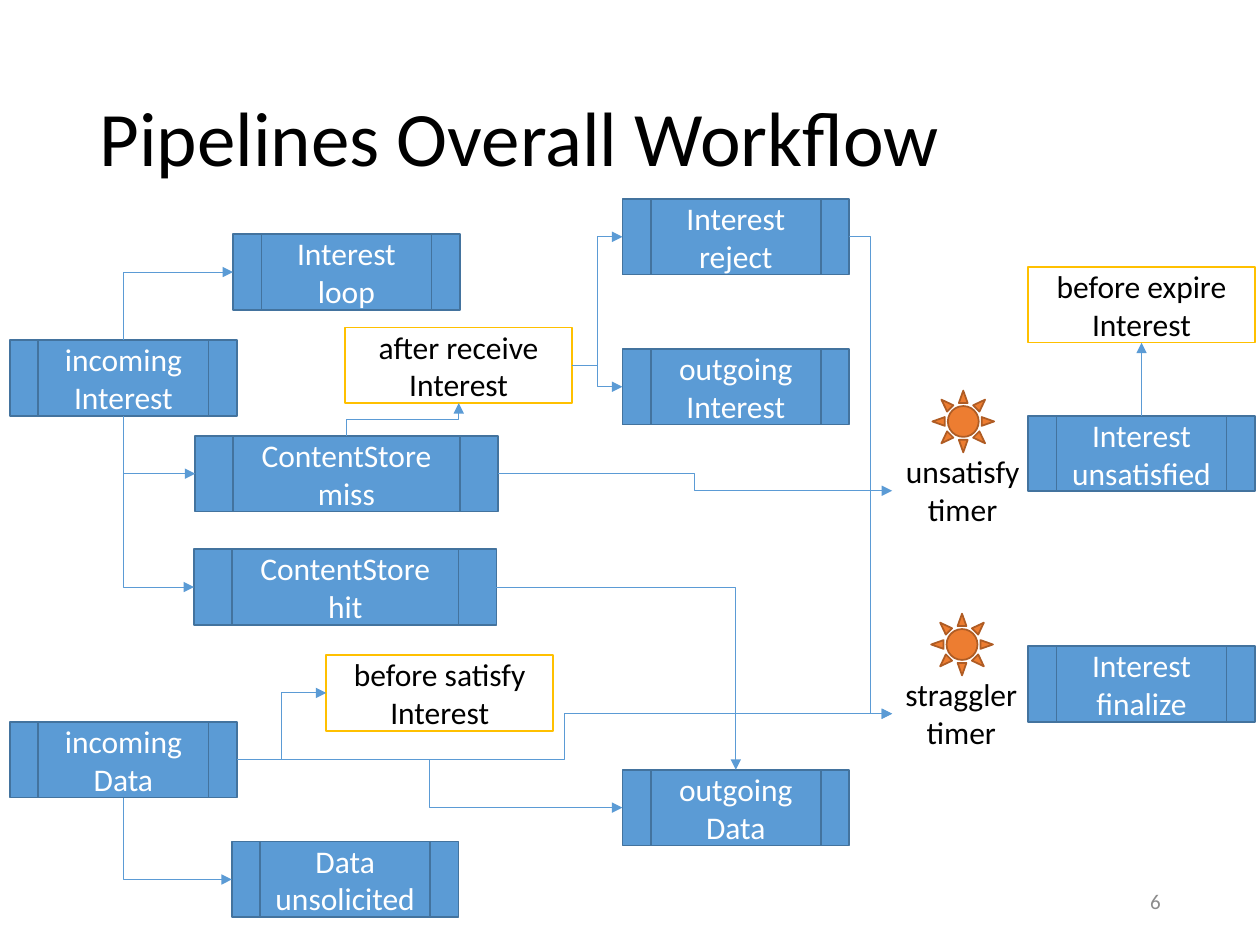
"""Build the pipelines overall workflow slide."""
from lxml.etree import SubElement
from pptx import Presentation
from pptx.dml.color import RGBColor
from pptx.enum.shapes import MSO_CONNECTOR, MSO_SHAPE
from pptx.enum.text import MSO_ANCHOR, MSO_AUTO_SIZE, PP_ALIGN
from pptx.oxml.ns import qn
from pptx.util import Inches, Pt

BLUE = RGBColor(0x5B, 0x9B, 0xD5)
DARK_BLUE = RGBColor(0x43, 0x73, 0x9E)
GOLD = RGBColor(0xFF, 0xC0, 0x00)
ORANGE = RGBColor(0xED, 0x7D, 0x31)
DARK_ORANGE = RGBColor(0xAF, 0x5C, 0x24)
GRAY = RGBColor(0x8C, 0x8C, 0x8C)
WHITE = RGBColor(0xFF, 0xFF, 0xFF)
BLACK = RGBColor(0x00, 0x00, 0x00)

TOP, LEFT, BOTTOM, RIGHT = range(4)
NODE_WIDTH, STORE_WIDTH, NODE_HEIGHT, SUN_SIZE = 1.8, 2.4, 0.6, 0.49

PIPELINES = [
    ("incoming Interest", 0.08, 2.7, NODE_WIDTH),
    ("incoming Data", 0.08, 5.73, NODE_WIDTH),
    ("outgoing Interest", 4.94, 2.77, NODE_WIDTH),
    ("outgoing Data", 4.94, 6.11, NODE_WIDTH),
    ("Interest reject", 4.94, 1.58, NODE_WIDTH),
    ("Interest unsatisfied", 8.16, 3.3, NODE_WIDTH),
    ("Interest loop", 1.85, 1.86, NODE_WIDTH),
    ("Data unsolicited", 1.84, 6.68, NODE_WIDTH),
    ("Interest finalize", 8.16, 5.13, NODE_WIDTH),
    ("ContentStore miss", 1.55, 3.46, STORE_WIDTH),
    ("ContentStore hit", 1.54, 4.36, STORE_WIDTH),
]
TRIGGERS = [
    ("after receive Interest", 2.74, 2.6, NODE_WIDTH),
    ("before satisfy Interest", 2.59, 5.2, NODE_WIDTH),
    ("before expire Interest", 8.16, 2.12, NODE_WIDTH),
]
TIMERS = [
    ("unsatisfy timer", 7.08, 3.54, 1.12, 7.4),
    ("straggler timer", 7.08, 5.31, 1.1, 7.39),
]
LINKS = [
    ("incoming Interest", TOP, "Interest loop", LEFT),
    ("incoming Interest", BOTTOM, "ContentStore miss", LEFT),
    ("incoming Interest", BOTTOM, "ContentStore hit", LEFT),
    ("ContentStore miss", TOP, "after receive Interest", BOTTOM),
    ("ContentStore miss", RIGHT, "unsatisfy timer", LEFT),
    ("ContentStore hit", RIGHT, "outgoing Data", TOP),
    ("after receive Interest", RIGHT, "Interest reject", LEFT),
    ("after receive Interest", RIGHT, "outgoing Interest", LEFT),
    ("Interest reject", RIGHT, "straggler timer", LEFT),
    ("Interest unsatisfied", TOP, "before expire Interest", BOTTOM),
    ("incoming Data", BOTTOM, "Data unsolicited", LEFT),
    ("incoming Data", RIGHT, "before satisfy Interest", LEFT),
    ("incoming Data", RIGHT, "outgoing Data", LEFT),
    ("incoming Data", RIGHT, "straggler timer", LEFT),
]


def write(shape, text, size, color, alignment, **frame_format):
    frame = shape.text_frame
    frame.text = text
    for name, value in {"word_wrap": True, **frame_format}.items():
        setattr(frame, name, value)
    paragraph = frame.paragraphs[0]
    paragraph.alignment = alignment
    for name, value in {"name": "Calibri", "size": Pt(size)}.items():
        setattr(paragraph.font, name, value)
    paragraph.font.color.rgb = color
    return paragraph


def add_box(shapes, kind, left, top, width, height, fill, line):
    shape = shapes.add_shape(kind, *map(Inches, (left, top, width, height)))
    shape.shadow.inherit = False
    shape.fill.solid()
    shape.fill.fore_color.rgb = fill
    shape.line.color.rgb = line
    shape.line.width = Pt(1)
    return shape


def add_text(shapes, place, *text_format, **frame_format):
    text_box = shapes.add_textbox(*map(Inches, place))
    return text_box, write(text_box, *text_format, **frame_format)


def add_timer(slide, name, left, top, width, sun_left):
    group = slide.shapes.add_group_shape()
    add_box(group.shapes, MSO_SHAPE.SUN, sun_left, top - 0.44,
            SUN_SIZE, SUN_SIZE, ORANGE, DARK_ORANGE)
    label, _ = add_text(group.shapes, (left, top, width, 0.71), name.replace(" ", "\v"),
                        18, BLACK, PP_ALIGN.CENTER,
                        word_wrap=False, auto_size=MSO_AUTO_SIZE.SHAPE_TO_FIT_TEXT)
    return label


def turn_upright(connector):
    center_x = (connector.begin_x + connector.end_x) // 2
    center_y = (connector.begin_y + connector.end_y) // 2
    half_width = abs(connector.end_y - connector.begin_y) // 2
    half_height = abs(connector.end_x - connector.begin_x) // 2
    upward = connector.end_y < connector.begin_y
    rise = half_height if upward else -half_height
    ends = {
        "begin_x": center_x + half_width, "begin_y": center_y + rise,
        "end_x": center_x - half_width, "end_y": center_y - rise,
        "rotation": 90 if upward else 270,
    }
    for name, value in ends.items():
        setattr(connector, name, value)


def add_link(slide, source, source_side, target, target_side):
    upright = source_side in (TOP, BOTTOM)
    straight = upright and source.left == target.left
    kind = MSO_CONNECTOR.STRAIGHT if straight else MSO_CONNECTOR.ELBOW
    connector = slide.shapes.add_connector(kind, 0, 0, 0, 0)
    connector.begin_connect(source, source_side)
    connector.end_connect(target, target_side)
    properties = connector._element.spPr
    if upright != (target_side in (TOP, BOTTOM)):
        properties.find(qn("a:prstGeom")).set("prst", "bentConnector2")
    if upright and not straight:
        turn_upright(connector)
    connector.line.color.rgb = BLUE
    connector.line.width = Pt(0.5)
    SubElement(properties.find(qn("a:ln")), qn("a:tailEnd"), type="triangle")
    SubElement(properties, qn("a:effectLst"))


def main():
    presentation = Presentation()
    presentation.slide_width, presentation.slide_height = Inches(10), Inches(7.5)
    slide = presentation.slides.add_slide(presentation.slide_layouts[6])
    middle = {"vertical_anchor": MSO_ANCHOR.MIDDLE}
    _, title = add_text(slide.shapes, (0.69, 0.4, 8.62, 1.45), "Pipelines Overall Workflow",
                        44, BLACK, PP_ALIGN.LEFT, **middle)
    title.line_spacing = 0.9
    add_text(slide.shapes, (7.06, 6.95, 2.25, 0.4), "6", 12, GRAY, PP_ALIGN.RIGHT, **middle)

    nodes = {}
    for group, kind, fill, line, color in (
        (PIPELINES, MSO_SHAPE.FLOWCHART_PREDEFINED_PROCESS, BLUE, DARK_BLUE, WHITE),
        (TRIGGERS, MSO_SHAPE.RECTANGLE, WHITE, GOLD, BLACK),
    ):
        for name, left, top, width in group:
            nodes[name] = add_box(slide.shapes, kind, left, top, width, NODE_HEIGHT, fill, line)
            write(nodes[name], name, 18, color, PP_ALIGN.CENTER, **middle)
    for timer in TIMERS:
        nodes[timer[0]] = add_timer(slide, *timer)
    for source, source_side, target, target_side in LINKS:
        add_link(slide, nodes[source], source_side, nodes[target], target_side)
    presentation.save("out.pptx")


if __name__ == "__main__":
    main()
